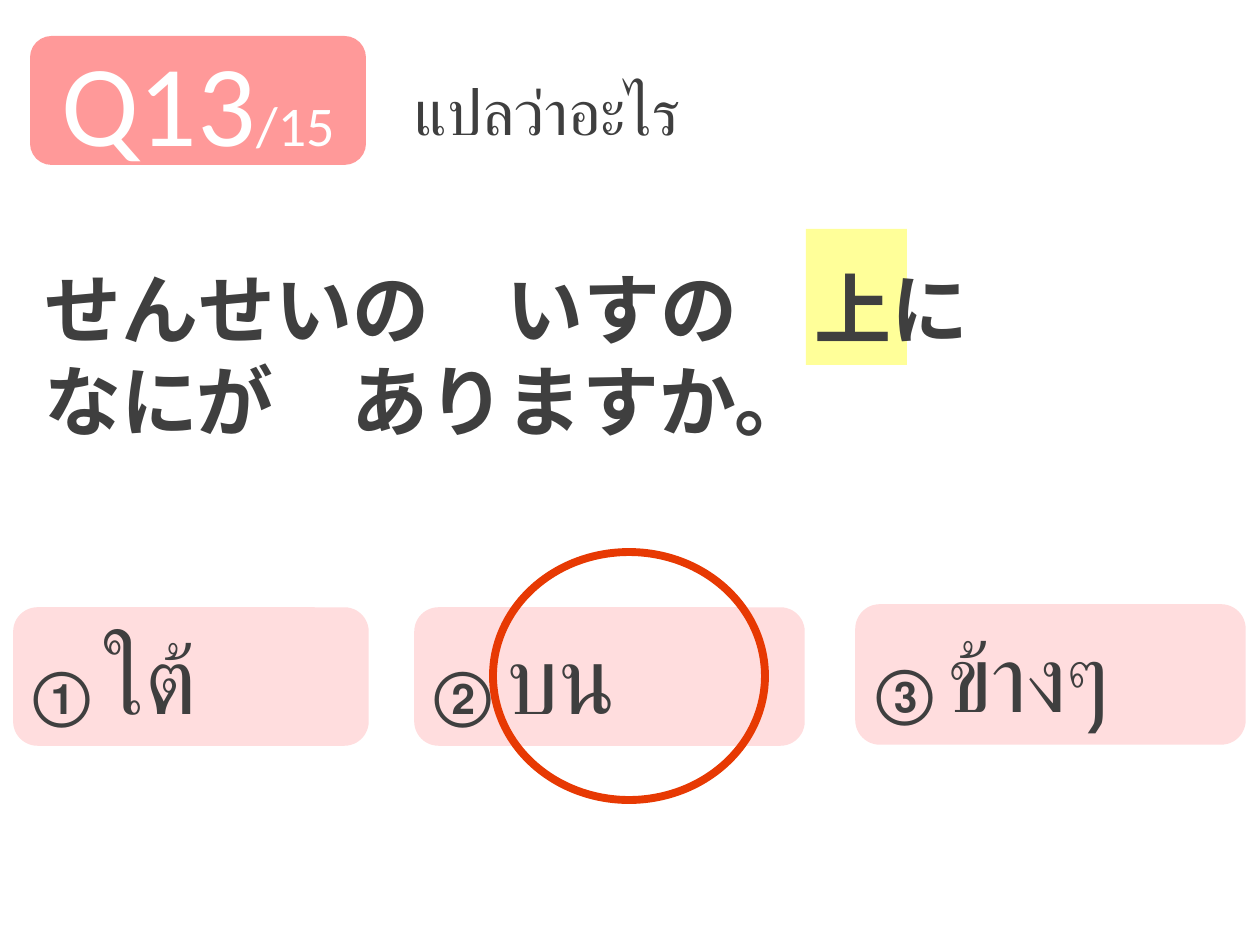
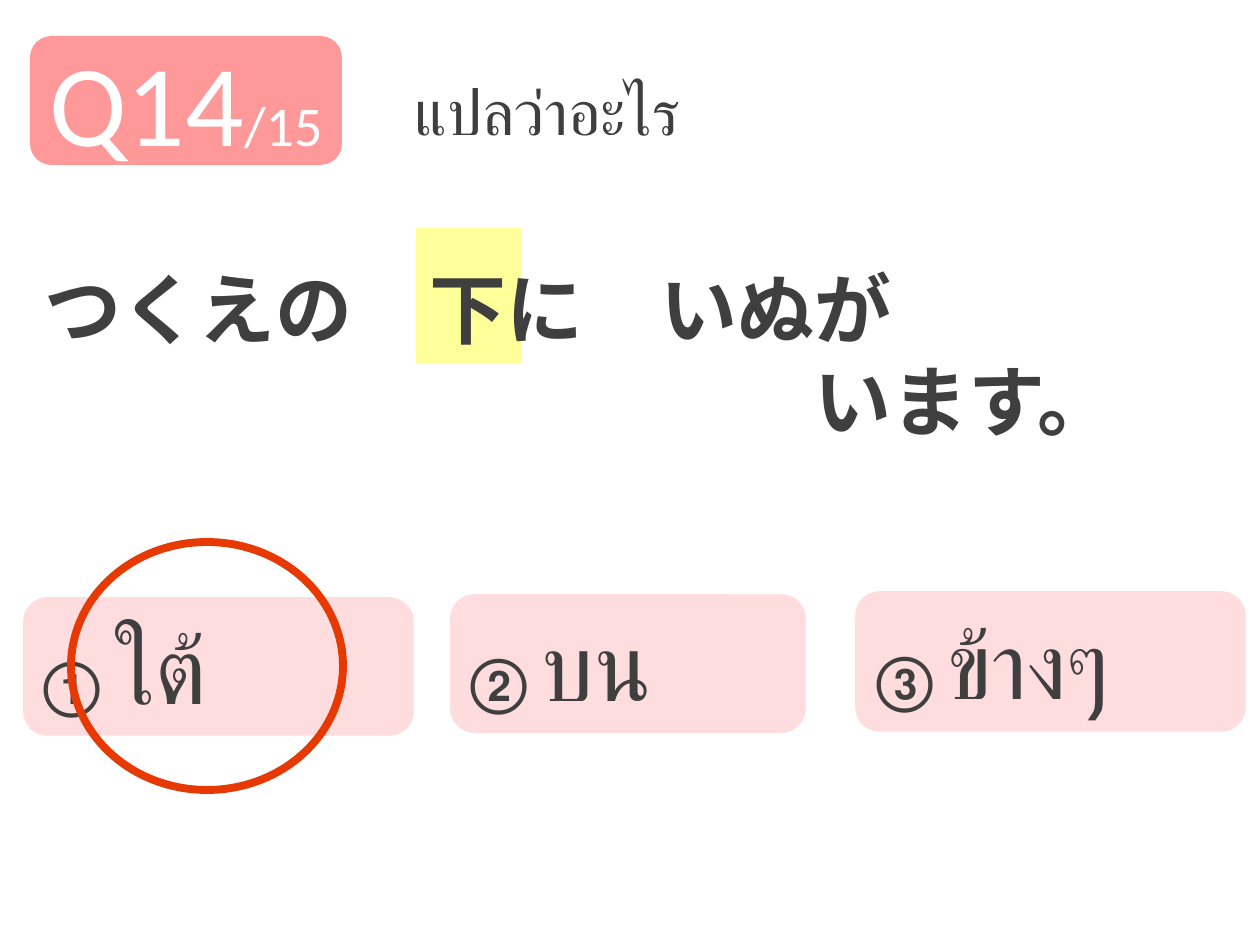
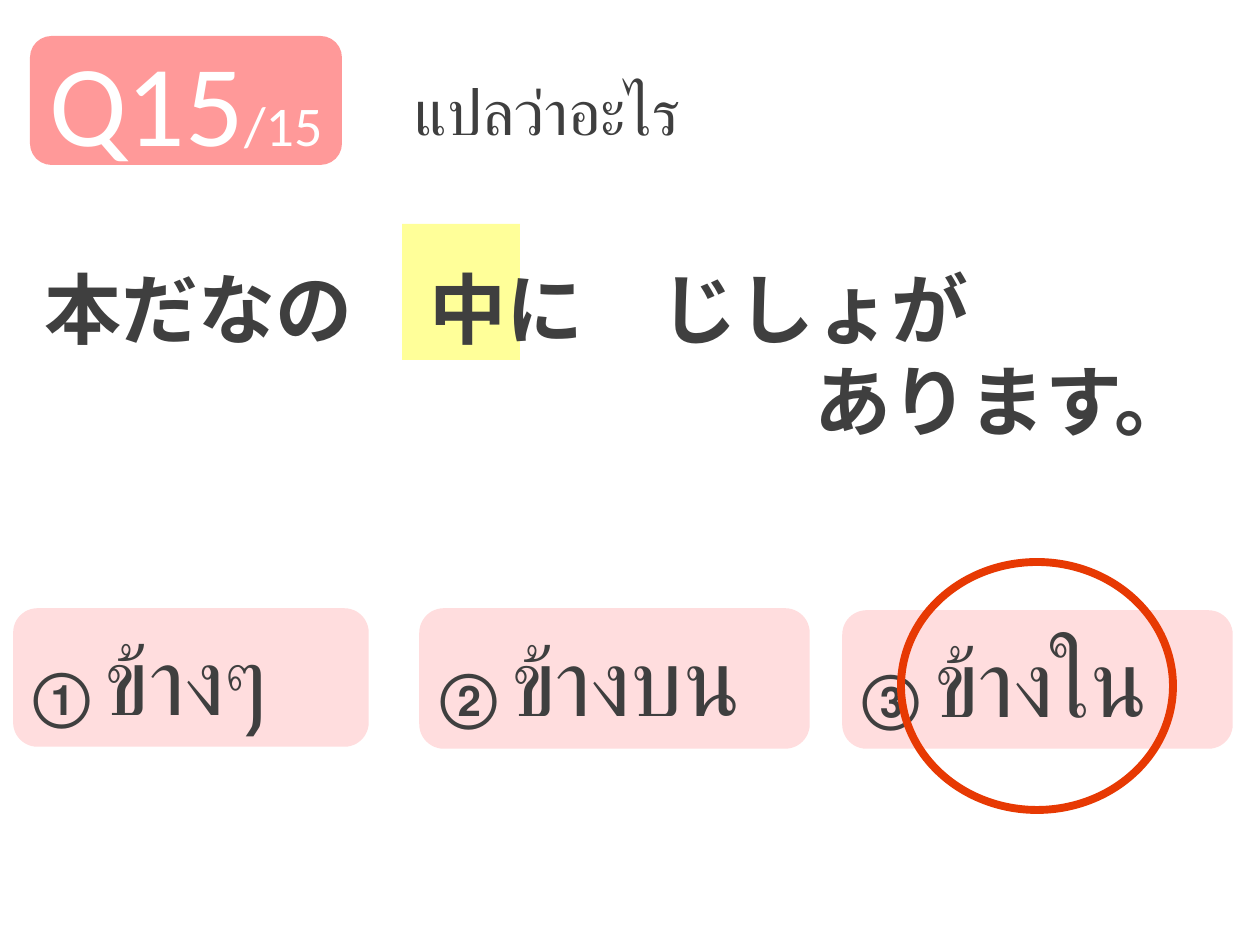
import pptx
import pptx.util
import pptx.dml.color
import pptx.enum.lang
import pptx.enum.shapes
import pptx.enum.text
import pptx.oxml
import pptx.oxml.ns

COLORS = {
    "paper": "FFFFFF",
    "ink": "3F3F3F",
    "badge": "FF9999",
    "answer": "FFDDDE",
    "highlight": "FFFF99",
    "ring": "E73903",
}
BODY_FONT, BADGE_FONT = "Roboto", "Calibri"
PROMPT = "แปลว่าอะไร"
TOTAL = 15
NUMERALS = "①②③"

QUIZ = [
    {
        "number": 13,
        "badge_width": 336,
        "highlight": (806, 229, 101, 136),
        "question": ["せんせいの　いすの　上に", "なにが　ありますか。"],
        "indented_chars": 0,
        "answers": [
            ("ใต้", (15, 609, 352, 135)),
            ("บน", (416, 609, 387, 135)),
            ("ข้างๆ", (857, 606, 387, 137)),
        ],
        "ring": (493, 552),
    },
    {
        "number": 14,
        "badge_width": 312,
        "highlight": (416, 228, 105, 136),
        "question": ["つくえの　下に　いぬが", "います。"],
        "indented_chars": 10,
        "answers": [
            ("ใต้", (25, 599, 387, 135)),
            ("บน", (452, 596, 352, 135)),
            ("ข้างๆ", (857, 593, 387, 137)),
        ],
        "ring": (71, 542),
    },
    {
        "number": 15,
        "badge_width": 312,
        "highlight": (402, 224, 118, 136),
        "question": ["本だなの　中に　じしょが", "あります。"],
        "indented_chars": 10,
        "answers": [
            ("ข้างๆ", (15, 610, 352, 135)),
            ("ข้างบน", (421, 610, 387, 137)),
            ("ข้างใน", (844, 612, 387, 135)),
        ],
        "ring": (901, 562),
    },
]

SLIDE_SIZE = (1260, 945)
BADGE_LEFT, BADGE_TOP, BADGE_HEIGHT = 30, 36, 129
PROMPT_BOX = (402, 66, 858, 89)
QUESTION_BOX = (32, 255, 1193, 199)
RING_SIZE = (272, 248)
QUESTION_SIZE = 44

SHAPES = pptx.enum.shapes.MSO_SHAPE
ALIGN = pptx.enum.text.PP_ALIGN
ANCHOR = pptx.enum.text.MSO_ANCHOR
LANG = pptx.enum.lang.MSO_LANGUAGE_ID


def px(length):
    return pptx.util.Emu(round(length * 914400 / 126))


def box_emu(box):
    return [px(length) for length in box]


def color(name):
    return pptx.dml.color.RGBColor.from_string(COLORS[name])


def format_run(run, size, ink="ink", font=BODY_FONT, bold=False, lang=LANG.THAI):
    run.font.size = pptx.util.Pt(size)
    run.font.bold = bold
    run.font.color.rgb = color(ink)
    run.font.name = font
    run.font.language_id = lang
    properties = run.font._element
    for script in ("a:ea", "a:cs"):
        typeface = pptx.oxml.parse_xml(
            f'<{script} {pptx.oxml.ns.nsdecls("a")} typeface="{font}"/>'
        )
        properties.append(typeface)


def add_run(paragraph, text, size, **style):
    run = paragraph.add_run()
    run.text = text
    format_run(run, size, **style)


def add_shape(slide, kind, box, fill=None, line=None, line_width=2):
    shape = slide.shapes.add_shape(kind, *box_emu(box))
    shape.shadow.inherit = False
    if fill:
        shape.fill.solid()
        shape.fill.fore_color.rgb = color(fill)
    else:
        shape.fill.background()
    if line:
        shape.line.color.rgb = color(line)
        shape.line.width = pptx.util.Pt(line_width)
    else:
        shape.line.fill.background()
    return shape


def grow_from_top(frame):
    frame.word_wrap = True
    frame.vertical_anchor = ANCHOR.TOP
    frame.auto_size = pptx.enum.text.MSO_AUTO_SIZE.SHAPE_TO_FIT_TEXT


def set_prompt(slide):
    title = slide.shapes.title
    title.left, title.top, title.width, title.height = box_emu(PROMPT_BOX)
    title.text_frame.text = PROMPT
    grow_from_top(title.text_frame)
    paragraph = title.text_frame.paragraphs[0]
    paragraph.alignment = ALIGN.LEFT
    format_run(paragraph.runs[0], 36)


def add_badge(slide, number, width):
    box = (BADGE_LEFT, BADGE_TOP, width, BADGE_HEIGHT)
    badge = add_shape(slide, SHAPES.ROUNDED_RECTANGLE, box, "badge")
    frame = badge.text_frame
    frame.word_wrap = False
    frame.vertical_anchor = ANCHOR.MIDDLE
    paragraph = frame.paragraphs[0]
    paragraph.alignment = ALIGN.CENTER
    for text, size in ((f"Q{number}", 66), (f"/{TOTAL}", 32)):
        add_run(paragraph, text, size, ink="paper", font=BADGE_FONT)


def add_answer(slide, numeral, text, box):
    answer = add_shape(slide, SHAPES.ROUNDED_RECTANGLE, box, "answer", "answer")
    answer.text_frame.vertical_anchor = ANCHOR.MIDDLE
    paragraph = answer.text_frame.paragraphs[0]
    paragraph.alignment = ALIGN.LEFT
    add_run(paragraph, f"{numeral} ", 32, bold=True, lang=LANG.JAPANESE)
    add_run(paragraph, text, 54)


def add_question(slide, lines, indented_chars):
    question = slide.shapes.add_textbox(*box_emu(QUESTION_BOX))
    frame = question.text_frame
    grow_from_top(frame)
    frame.text = "\n".join(lines)
    for paragraph in frame.paragraphs:
        format_run(paragraph.runs[0], QUESTION_SIZE, bold=True, lang=LANG.JAPANESE)
    if indented_chars:
        indent = pptx.util.Pt(indented_chars * QUESTION_SIZE)
        frame.paragraphs[-1]._p.get_or_add_pPr().set("marL", str(indent))


def add_quiz_slide(deck, quiz):
    slide = deck.slides.add_slide(deck.slide_layouts[5])
    set_prompt(slide)
    add_shape(slide, SHAPES.RECTANGLE, quiz["highlight"], "highlight")
    add_badge(slide, quiz["number"], quiz["badge_width"])
    for numeral, (text, box) in zip(NUMERALS, quiz["answers"]):
        add_answer(slide, numeral, text, box)
    add_question(slide, quiz["question"], quiz["indented_chars"])
    add_shape(slide, SHAPES.OVAL, quiz["ring"] + RING_SIZE, line="ring", line_width=4.5)


def main():
    deck = pptx.Presentation()
    deck.slide_width, deck.slide_height = box_emu(SLIDE_SIZE)
    for quiz in QUIZ:
        add_quiz_slide(deck, quiz)
    deck.save("out.pptx")


if __name__ == "__main__":
    main()
